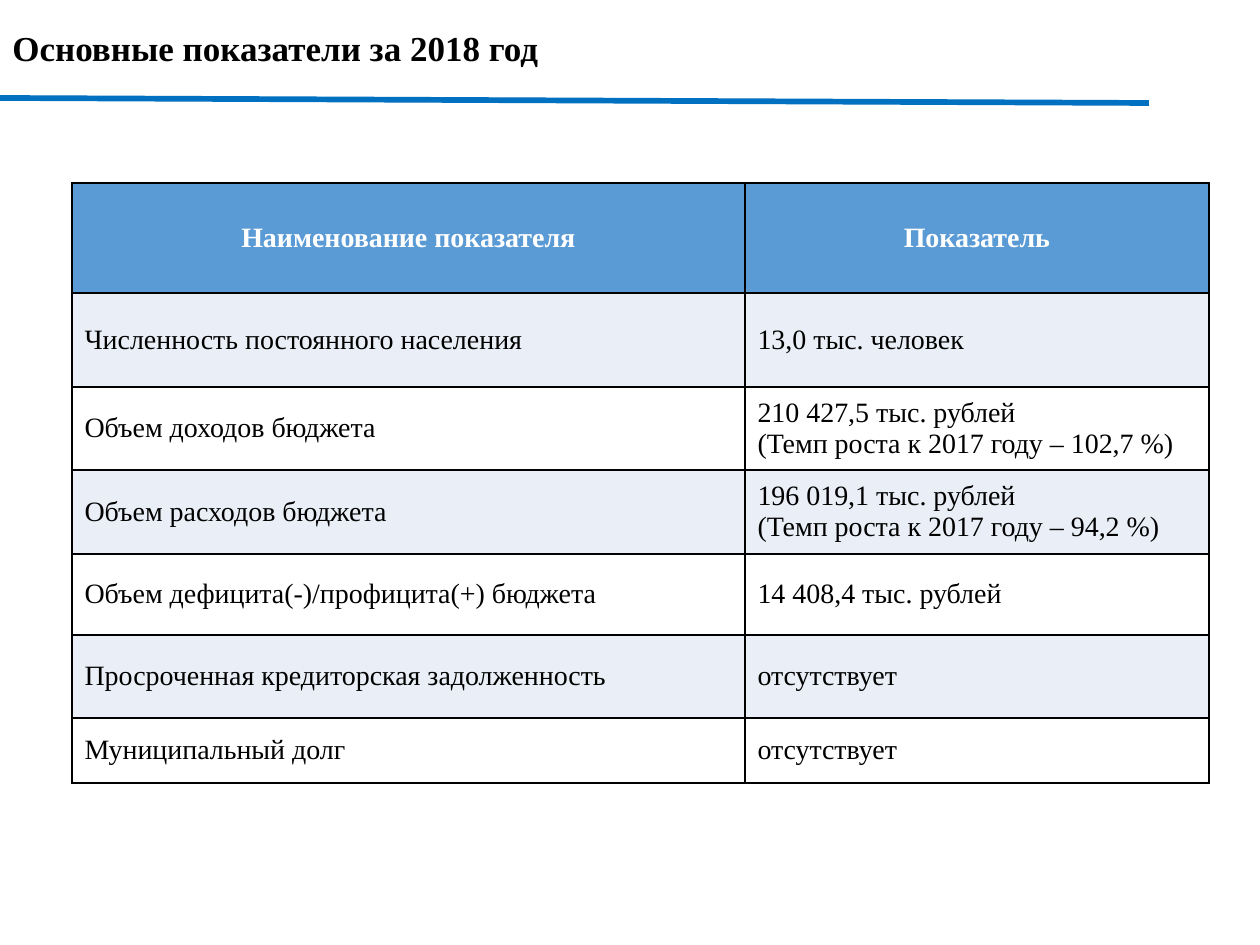
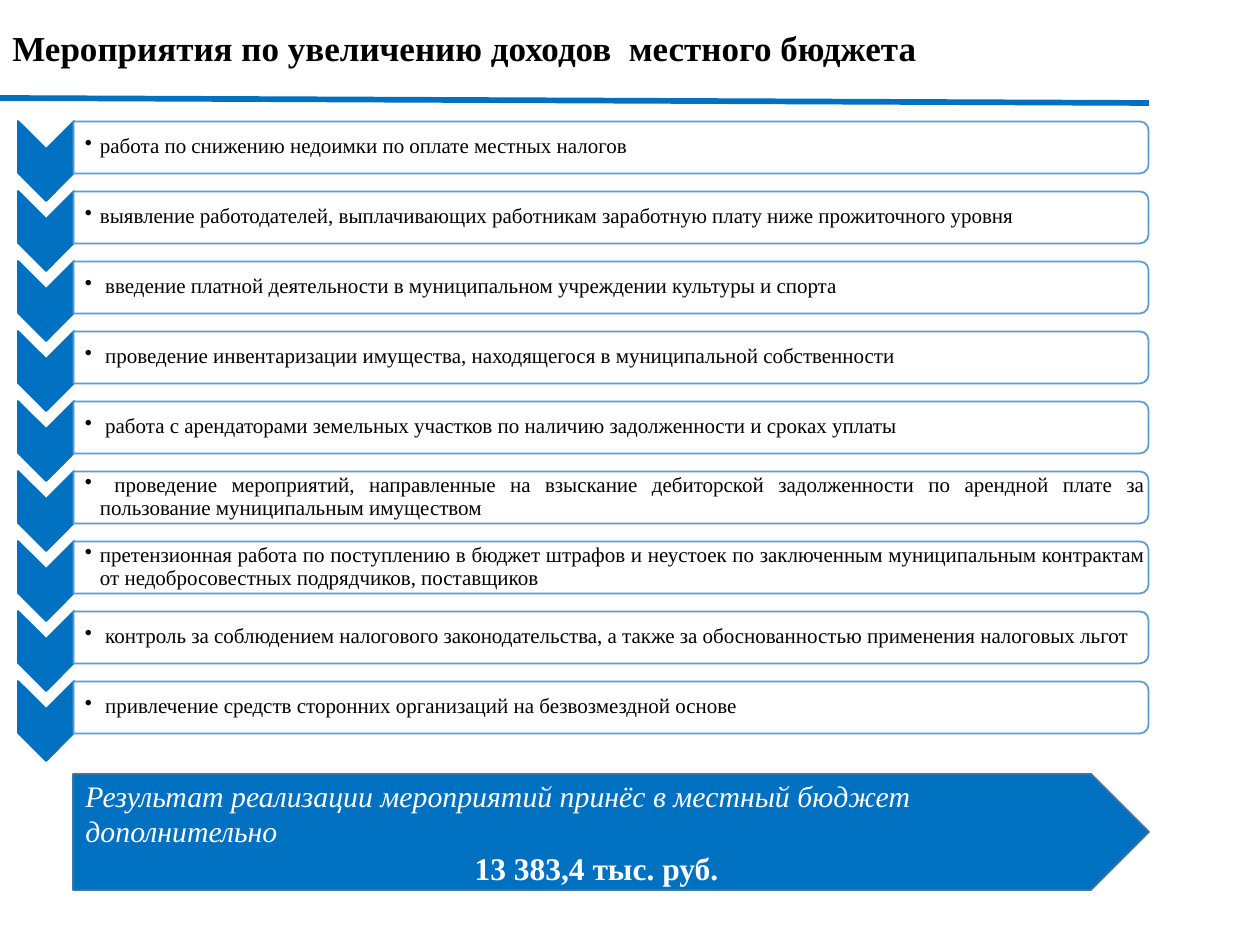
"""Build two budget slides: the key figures table and the revenue measures."""
from dataclasses import dataclass

from lxml import etree
from pptx import Presentation
from pptx.dml.color import RGBColor
from pptx.enum.shapes import MSO_CONNECTOR, MSO_SHAPE
from pptx.enum.text import MSO_ANCHOR, MSO_AUTO_SIZE, PP_ALIGN
from pptx.oxml.ns import qn
from pptx.shapes.autoshape import Shape
from pptx.slide import Slide
from pptx.table import _Cell
from pptx.text.text import TextFrame, _Paragraph
from pptx.util import Emu, Pt

EMU_PER_PX = 914400 / 126
SLIDE_WIDTH, SLIDE_HEIGHT = 1260, 945

BLACK = RGBColor(0x00, 0x00, 0x00)
WHITE = RGBColor(0xFF, 0xFF, 0xFF)
DEEP_BLUE = RGBColor(0x00, 0x70, 0xC0)
MID_BLUE = RGBColor(0x5B, 0x9B, 0xD5)
PALE_BLUE = RGBColor(0xEA, 0xEF, 0xF7)
EDGE_BLUE = RGBColor(0x43, 0x73, 0x9E)
FONT = "Times New Roman"

STRAIGHT = MSO_CONNECTOR.STRAIGHT
CHEVRON = MSO_SHAPE.CHEVRON
ROUNDED_END = MSO_SHAPE.ROUND_2_SAME_RECTANGLE
PENTAGON = MSO_SHAPE.PENTAGON
MIDDLE = MSO_ANCHOR.MIDDLE
GROW = MSO_AUTO_SIZE.SHAPE_TO_FIT_TEXT
LEFT, CENTER, JUSTIFY = PP_ALIGN.LEFT, PP_ALIGN.CENTER, PP_ALIGN.JUSTIFY


@dataclass(frozen=True)
class Box:
    """A visible rectangle in px."""

    left: int
    top: int
    width: int
    height: int

    def emu(self) -> tuple[Emu, ...]:
        """Return the four lengths in EMU."""
        return tuple(px(n) for n in (self.left, self.top, self.width, self.height))

    def turned(self) -> "Box":
        """Return the box that covers this one after a quarter turn."""
        shift = (self.width - self.height) // 2
        return Box(self.left + shift, self.top - shift, self.height, self.width)

    def lowered(self, distance: int) -> "Box":
        """Return the box moved down."""
        return Box(self.left, self.top + distance, self.width, self.height)


@dataclass(frozen=True)
class TextStyle:
    """The look of one run."""

    size: int
    color: RGBColor = BLACK
    bold: bool = False
    italic: bool = False


@dataclass(frozen=True)
class Indicator:
    """One table row: a name, its value lines and the row height."""

    name: str
    value: tuple[str, ...]
    height: int


TITLE_STYLE = TextStyle(20, bold=True)
HEADER_STYLE = TextStyle(16, WHITE, bold=True)
BODY_STYLE = TextStyle(16)
MEASURE_STYLE = TextStyle(12)
RESULT_STYLE = TextStyle(17, WHITE, italic=True)
SUM_STYLE = TextStyle(18, WHITE, bold=True)

TITLE_BOX = Box(0, 20, 1108, 55)
TABLE_BOX = Box(72, 183, 1137, 600)
COLUMN_WIDTHS = (673, 464)
CHEVRON_BOX = Box(18, 121, 56, 80)
BAND_BOX = Box(74, 121, 1075, 52)
MEASURE_BOX = Box(74, 124, 1073, 46)
RESULT_BOX = Box(73, 774, 1076, 116)
MEASURE_STEP = 70
BULLET_INDENT = 15

INDICATORS = (
    Indicator("Наименование показателя", ("Показатель",), 110),
    Indicator("Численность постоянного населения", ("13,0 тыс. человек",), 94),
    Indicator("Объем доходов бюджета",
              ("210 427,5 тыс. рублей", "(Темп роста к 2017 году – 102,7 %)"), 83),
    Indicator("Объем расходов бюджета",
              ("196 019,1 тыс. рублей", "(Темп роста к 2017 году – 94,2 %)"), 84),
    Indicator("Объем дефицита(-)/профицита(+) бюджета", ("14 408,4 тыс. рублей",), 81),
    Indicator("Просроченная кредиторская задолженность", ("отсутствует",), 83),
    Indicator("Муниципальный долг", ("отсутствует",), 65),
)

MEASURES = (
    "работа по снижению недоимки по оплате местных налогов",
    "выявление работодателей, выплачивающих работникам заработную плату ниже прожиточного уровня",
    " введение платной деятельности в муниципальном учреждении культуры и спорта",
    " проведение инвентаризации имущества, находящегося в муниципальной собственности",
    " работа с арендаторами земельных участков по наличию задолженности и сроках уплаты",
    " проведение мероприятий, направленные на взыскание дебиторской задолженности"
    " по арендной плате за пользование муниципальным имуществом",
    "претензионная работа по поступлению в бюджет штрафов и неустоек по заключенным"
    " муниципальным контрактам от недобросовестных подрядчиков, поставщиков",
    " контроль за соблюдением налогового законодательства, а также за обоснованностью"
    " применения налоговых льгот",
    " привлечение средств сторонних организаций на безвозмездной основе",
)


def px(length: int) -> Emu:
    """Turn px into EMU."""
    return Emu(round(length * EMU_PER_PX))


def add_run(paragraph: _Paragraph, text: str, style: TextStyle) -> None:
    """Add one styled run."""
    run = paragraph.add_run()
    run.text = text
    run.font.name = FONT
    run.font.size = Pt(style.size)
    run.font.bold = style.bold
    run.font.italic = style.italic
    run.font.color.rgb = style.color


def add_line(frame: TextFrame, text: str, style: TextStyle,
             align: PP_ALIGN = LEFT) -> _Paragraph:
    """Write a paragraph, using the empty first one when there is one."""
    first = frame.paragraphs[0]
    paragraph = frame.add_paragraph() if first.runs else first
    paragraph.alignment = align
    add_run(paragraph, text, style)
    return paragraph


def add_text_box(slide: Slide, box: Box) -> TextFrame:
    """Add a wrapping text box and return its frame."""
    frame = slide.shapes.add_textbox(*box.emu()).text_frame
    frame.word_wrap = True
    return frame


def add_figure(slide: Slide, kind: MSO_SHAPE, box: Box,
               fill: RGBColor, edge: RGBColor) -> Shape:
    """Add a flat preset shape with a thin outline."""
    figure = slide.shapes.add_shape(kind, *box.emu())
    figure.shadow.inherit = False
    figure.fill.solid()
    figure.fill.fore_color.rgb = fill
    figure.line.color.rgb = edge
    figure.line.width = Pt(1)
    return figure


def add_titled_slide(deck: Presentation, title: str) -> Slide:
    """Add a blank slide with the shared title and rule."""
    slide = deck.slides.add_slide(deck.slide_layouts[6])
    rule = slide.shapes.add_connector(STRAIGHT, px(0), px(98), px(1149), px(103))
    rule.line.color.rgb = DEEP_BLUE
    rule.line.width = Pt(3.25)
    etree.SubElement(rule.element.spPr, qn("a:effectLst"))
    frame = add_text_box(slide, TITLE_BOX)
    frame.auto_size = GROW
    add_line(frame, title, TITLE_STYLE)
    return slide


def paint_cell(cell: _Cell, fill: RGBColor) -> None:
    """Give a cell black borders and a plain fill."""
    properties = cell._tc.get_or_add_tcPr()
    for side in ("a:lnL", "a:lnR", "a:lnT", "a:lnB"):
        border = etree.SubElement(properties, qn(side), w=str(Pt(1)))
        paint = etree.SubElement(border, qn("a:solidFill"))
        etree.SubElement(paint, qn("a:srgbClr"), val=str(BLACK))
    cell.fill.solid()
    cell.fill.fore_color.rgb = fill
    cell.vertical_anchor = MIDDLE


def add_indicator_table(slide: Slide) -> None:
    """Draw the table of key figures."""
    table = slide.shapes.add_table(
        len(INDICATORS), len(COLUMN_WIDTHS), *TABLE_BOX.emu()).table
    table.horz_banding = False
    for column, width in zip(table.columns, COLUMN_WIDTHS):
        column.width = px(width)
    for index, indicator in enumerate(INDICATORS):
        table.rows[index].height = px(indicator.height)
        is_header = index == 0
        fill = MID_BLUE if is_header else PALE_BLUE if index % 2 else WHITE
        style, align = (HEADER_STYLE, CENTER) if is_header else (BODY_STYLE, LEFT)
        for cell, lines in zip(table.rows[index].cells,
                               ((indicator.name,), indicator.value)):
            paint_cell(cell, fill)
            for line in lines:
                add_line(cell.text_frame, line, style, align)


def add_bullet(paragraph: _Paragraph) -> None:
    """Give a paragraph a hanging round bullet."""
    properties = paragraph._p.get_or_add_pPr()
    properties.set("marL", str(px(BULLET_INDENT)))
    properties.set("indent", str(px(-BULLET_INDENT)))
    etree.SubElement(properties, qn("a:buChar"), char="•")


def add_measure(slide: Slide, text: str, drop: int) -> None:
    """Draw one measure: a chevron, a band and its text."""
    chevron = add_figure(slide, CHEVRON, CHEVRON_BOX.lowered(drop).turned(),
                         DEEP_BLUE, DEEP_BLUE)
    band = add_figure(slide, ROUNDED_END, BAND_BOX.lowered(drop).turned(),
                      WHITE, MID_BLUE)
    chevron.rotation = band.rotation = 90
    band_color = band.element.spPr.find(qn("a:solidFill"))[0]
    etree.SubElement(band_color, qn("a:alpha"), val="90000")
    frame = add_text_box(slide, MEASURE_BOX.lowered(drop))
    frame.vertical_anchor = MIDDLE
    frame.margin_left = px(11)
    frame.margin_top = frame.margin_right = frame.margin_bottom = px(1)
    paragraph = add_line(frame, text, MEASURE_STYLE, JUSTIFY)
    paragraph.line_spacing = 0.9
    add_bullet(paragraph)


def add_result(slide: Slide) -> None:
    """Draw the arrow with the total effect."""
    frame = add_figure(slide, PENTAGON, RESULT_BOX, DEEP_BLUE, EDGE_BLUE).text_frame
    frame.word_wrap = True
    frame.vertical_anchor = MIDDLE
    add_line(frame, "Результат реализации мероприятий принёс в местный бюджет дополнительно",
             RESULT_STYLE)
    add_line(frame, "13 383,4 тыс. руб.", SUM_STYLE, CENTER)


def main() -> None:
    """Build and save the deck."""
    deck = Presentation()
    deck.slide_width, deck.slide_height = px(SLIDE_WIDTH), px(SLIDE_HEIGHT)
    add_indicator_table(add_titled_slide(deck, "Основные показатели за 2018 год"))
    measures_slide = add_titled_slide(
        deck, "Мероприятия по увеличению доходов  местного бюджета")
    for index, measure in enumerate(MEASURES):
        add_measure(measures_slide, measure, index * MEASURE_STEP)
    add_result(measures_slide)
    deck.save("out.pptx")


if __name__ == "__main__":
    main()
